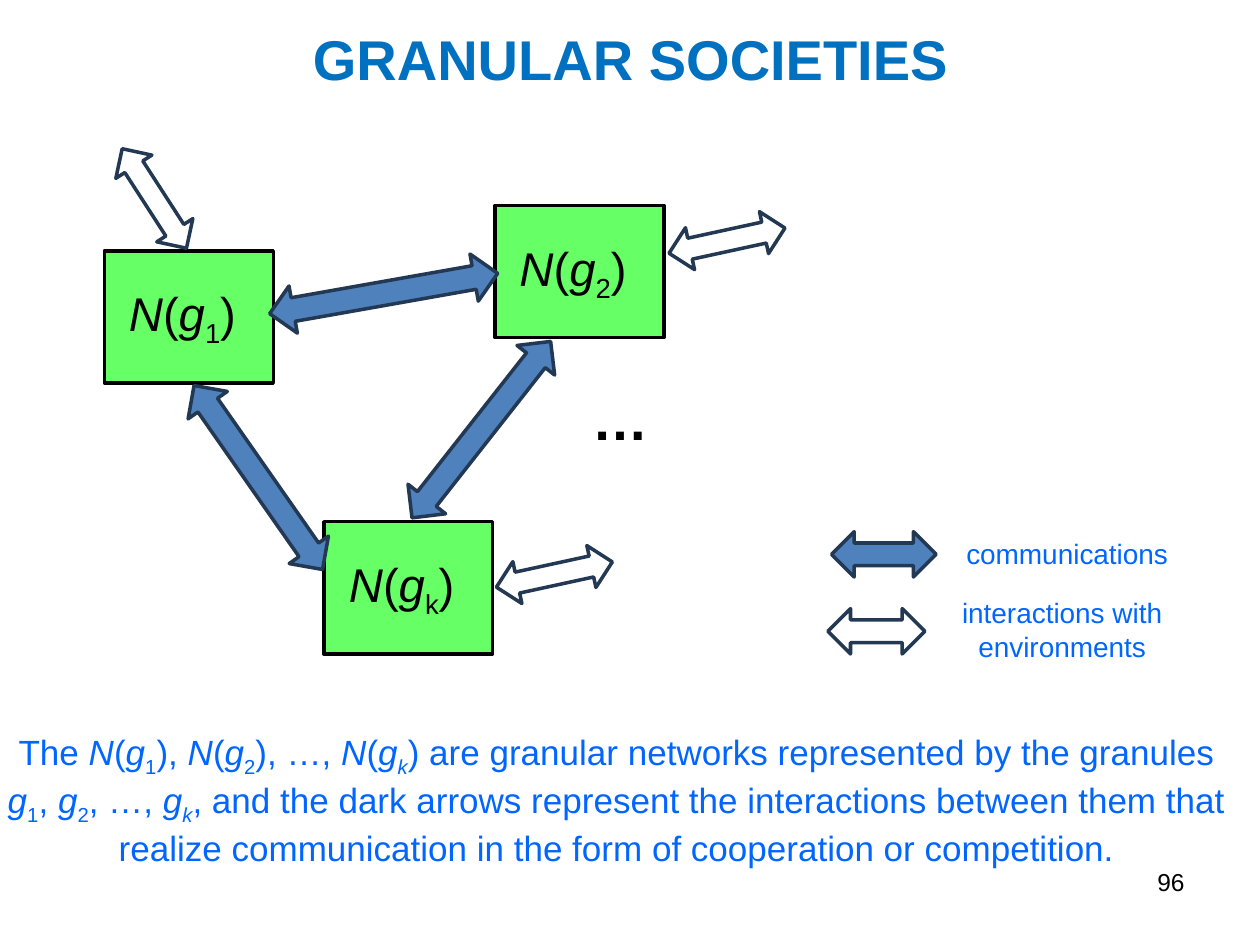
"""Build the slide on granular societies and how they communicate."""
from math import atan2, degrees, hypot

from pptx import Presentation
from pptx.dml.color import RGBColor
from pptx.enum.shapes import MSO_SHAPE
from pptx.enum.text import MSO_ANCHOR, PP_ALIGN
from pptx.util import Inches, Pt

BLACK = RGBColor(0, 0, 0)
WHITE = RGBColor(255, 255, 255)
TITLE = RGBColor(0x00, 0x70, 0xC0)
BLUE = RGBColor(0x00, 0x66, 0xFF)
GREEN = RGBColor(0x66, 0xFF, 0x66)
STEEL = RGBColor(0x4F, 0x81, 0xBD)
NAVY = RGBColor(0x23, 0x39, 0x53)

MARKS = {"/": (True, False), "_": (False, True), "~": (True, True)}
NOTE = ("The |/N|(|/g|_1|), |/N|(|/g|_2|), …, |/N|(|/g|~k|) are granular networks "
        "represented by the granules |/g|_1|, |/g|_2|, …, |/g|~k|, and the dark arrows "
        "represent the interactions between them that realize communication in the "
        "form of cooperation or competition.")
NODES = [("1", 0.83, 1.99), ("2", 3.93, 1.63), ("k", 2.57, 4.14)]
NODE_W, NODE_H = 1.34, 1.05
LABELS = [
    ("GRANULAR SOCIETIES", (0.04, 0, 9.93, 0.92),
     dict(size=32, color=TITLE, bold=True, anchor=MSO_ANCHOR.MIDDLE)),
    (NOTE, (-0.07, 5.75, 9.93, 1.11), dict(size=20, color=BLUE)),
    ("96", (7.17, 6.83, 2.33, 0.52), dict(size=14, align=PP_ALIGN.RIGHT)),
    ("…", (4.6, 3, 0.78, 0.57), dict(size=32, bold=True, align=PP_ALIGN.LEFT)),
    ("communications", (7.44, 4.21, 2.06, 0.37), dict(size=16, color=BLUE)),
    ("interactions with environments", (7.36, 4.68, 2.14, 0.64),
     dict(size=16, color=BLUE)),
]
ARROWS = [
    (STEEL, 0.38, [((2.14, 2.49), (3.95, 2.17)), ((1.54, 3.06), (2.56, 4.52)),
                   ((4.37, 2.71), (3.27, 4.11))]),
    (WHITE, 0.34, [((6.23, 1.81), (5.31, 2.01)), ((4.86, 4.46), (3.94, 4.66)),
                   ((1.48, 1.97), (0.97, 1.18))]),
    (STEEL, 0.36, [((6.6, 4.4), (7.43, 4.4))]),
    (WHITE, 0.36, [((7.34, 5.01), (6.57, 5.01))]),
]


def write(shape, text, size=16, color=BLACK, bold=False,
          align=PP_ALIGN.CENTER, anchor=MSO_ANCHOR.TOP):
    frame = shape.text_frame
    frame.word_wrap = True
    frame.vertical_anchor = anchor
    para = frame.paragraphs[0]
    para.alignment = align
    for part in text.split("|"):
        slant, sub = MARKS.get(part[0], (False, False))
        run = para.add_run()
        run.text = part[1:] if part[0] in MARKS else part
        font = run.font
        font.name, font.size, font.bold = "Arial", Pt(size), bold
        font.italic = slant
        font.color.rgb = color
        if sub:
            font._element.set("baseline", "-25000")


def draw(slide, kind, box, fill, line):
    shape = slide.shapes.add_shape(kind, *map(Inches, box))
    shape.shadow.inherit = False
    shape.fill.solid()
    shape.fill.fore_color.rgb = fill
    shape.line.color.rgb = line
    shape.line.width = Pt(2)
    return shape


def link(slide, start, end, thick, fill):
    (x1, y1), (x2, y2) = start, end
    span = hypot(x2 - x1, y2 - y1)
    box = ((x1 + x2 - span) / 2, (y1 + y2 - thick) / 2, span, thick)
    arrow = draw(slide, MSO_SHAPE.LEFT_RIGHT_ARROW, box, fill, NAVY)
    arrow.rotation = degrees(atan2(y2 - y1, x2 - x1)) % 360


def main():
    deck = Presentation()
    deck.slide_width, deck.slide_height = Inches(10), Inches(7.5)
    slide = deck.slides.add_slide(deck.slide_layouts[6])
    for mark, left, top in NODES:
        node = draw(slide, MSO_SHAPE.RECTANGLE, (left, top, NODE_W, NODE_H), GREEN, BLACK)
        write(node, f"/N|(|/g|_{mark}|) ", size=27, anchor=MSO_ANCHOR.MIDDLE)
    for text, box, style in LABELS:
        write(slide.shapes.add_textbox(*map(Inches, box)), text, **style)
    for fill, thick, ends in ARROWS:
        for start, end in ends:
            link(slide, start, end, thick, fill)
    deck.save("out.pptx")


if __name__ == "__main__":
    main()
